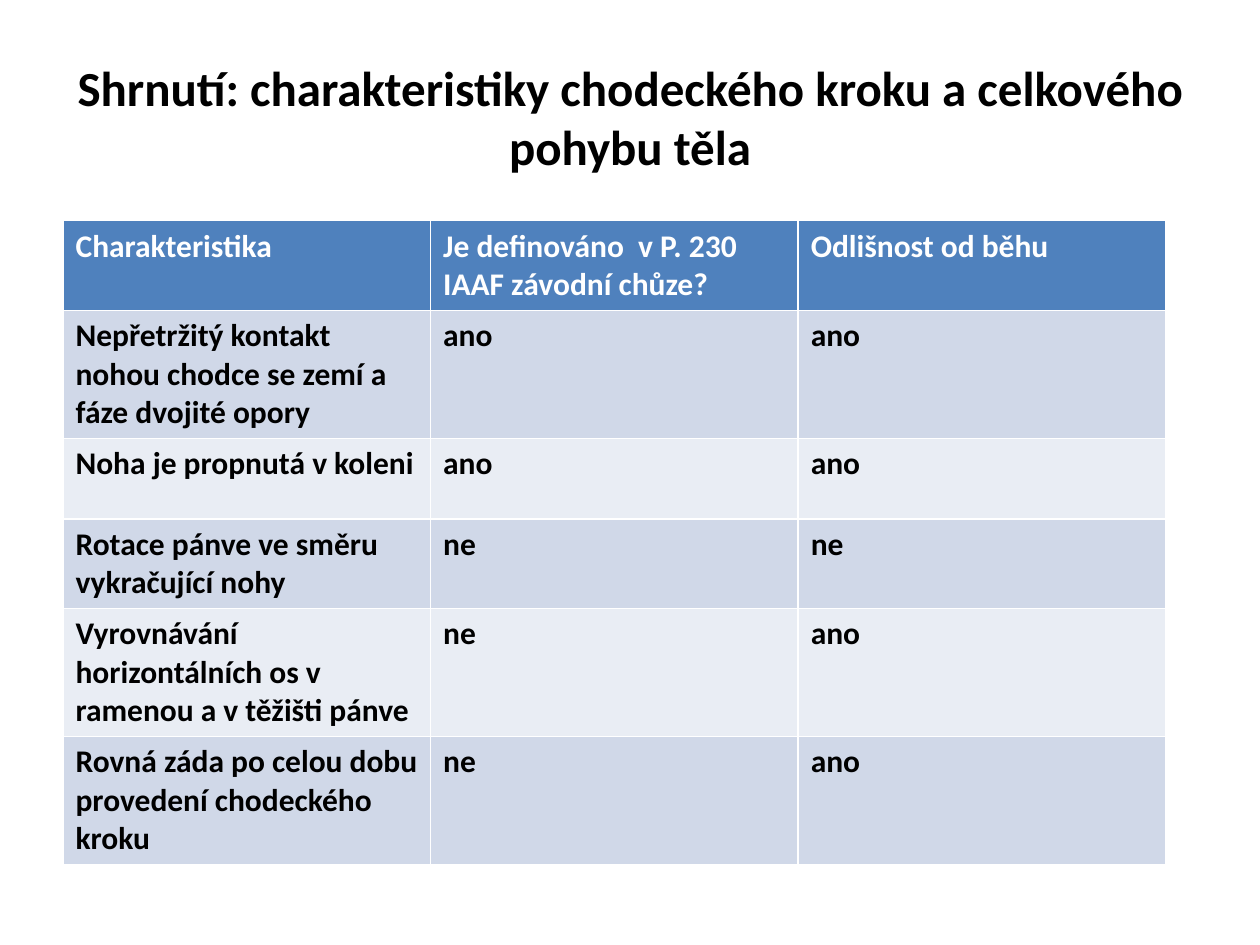
from pptx import Presentation
from pptx.dml.color import RGBColor
from pptx.enum.text import MSO_ANCHOR, PP_ALIGN
from pptx.util import Cm, Pt

MIDDLE = MSO_ANCHOR.MIDDLE
CENTER = PP_ALIGN.CENTER
FONT = "Calibri"
COLORS = {
    "head": "4F81BD",
    "odd": "D0D8E8",
    "even": "E9EDF4",
    "dark": "000000",
    "light": "FFFFFF",
}
ROWS = [
    ("Charakteristika", "Je definováno  v P. 230 IAAF závodní chůze?", "Odlišnost od běhu"),
    ("Nepřetržitý kontakt nohou chodce se zemí a fáze dvojité opory", "ano", "ano"),
    ("Noha je propnutá v koleni", "ano", "ano"),
    ("Rotace pánve ve směru vykračující nohy", "ne", "ne"),
    ("Vyrovnávání horizontálních os v ramenou a v těžišti pánve", "ne", "ano"),
    ("Rovná záda po celou dobu provedení chodeckého kroku", "ne", "ano"),
]


def style(para, size, color):
    for run in para.runs:
        run.font.name = FONT
        run.font.size = Pt(size)
        run.font.bold = True
        run.font.color.rgb = RGBColor.from_string(COLORS[color])


prs = Presentation()
prs.slide_width = Cm(25.4)
prs.slide_height = Cm(19.05)
slide = prs.slides.add_slide(prs.slide_layouts[5])

title = slide.shapes.title
title.left, title.top = Cm(1.27), Cm(0.76)
title.width, title.height = Cm(22.86), Cm(3.18)
frame = title.text_frame
frame.text = "Shrnutí: charakteristiky chodeckého kroku a celkového pohybu těla"
frame.word_wrap = True
frame.vertical_anchor = MIDDLE
frame.paragraphs[0].alignment = CENTER
style(frame.paragraphs[0], 28, "dark")

high = Cm(1.63)
table = slide.shapes.add_table(
    len(ROWS), len(ROWS[0]), Cm(1.27), Cm(4.45), Cm(22.23), high * len(ROWS)
).table
for i, row in enumerate(ROWS):
    fill = "head" if i == 0 else "odd" if i % 2 else "even"
    for j, text in enumerate(row):
        cell = table.cell(i, j)
        cell.fill.solid()
        cell.fill.fore_color.rgb = RGBColor.from_string(COLORS[fill])
        cell.text_frame.text = text
        style(cell.text_frame.paragraphs[0], 18, "dark" if i else "light")

prs.save("out.pptx")
